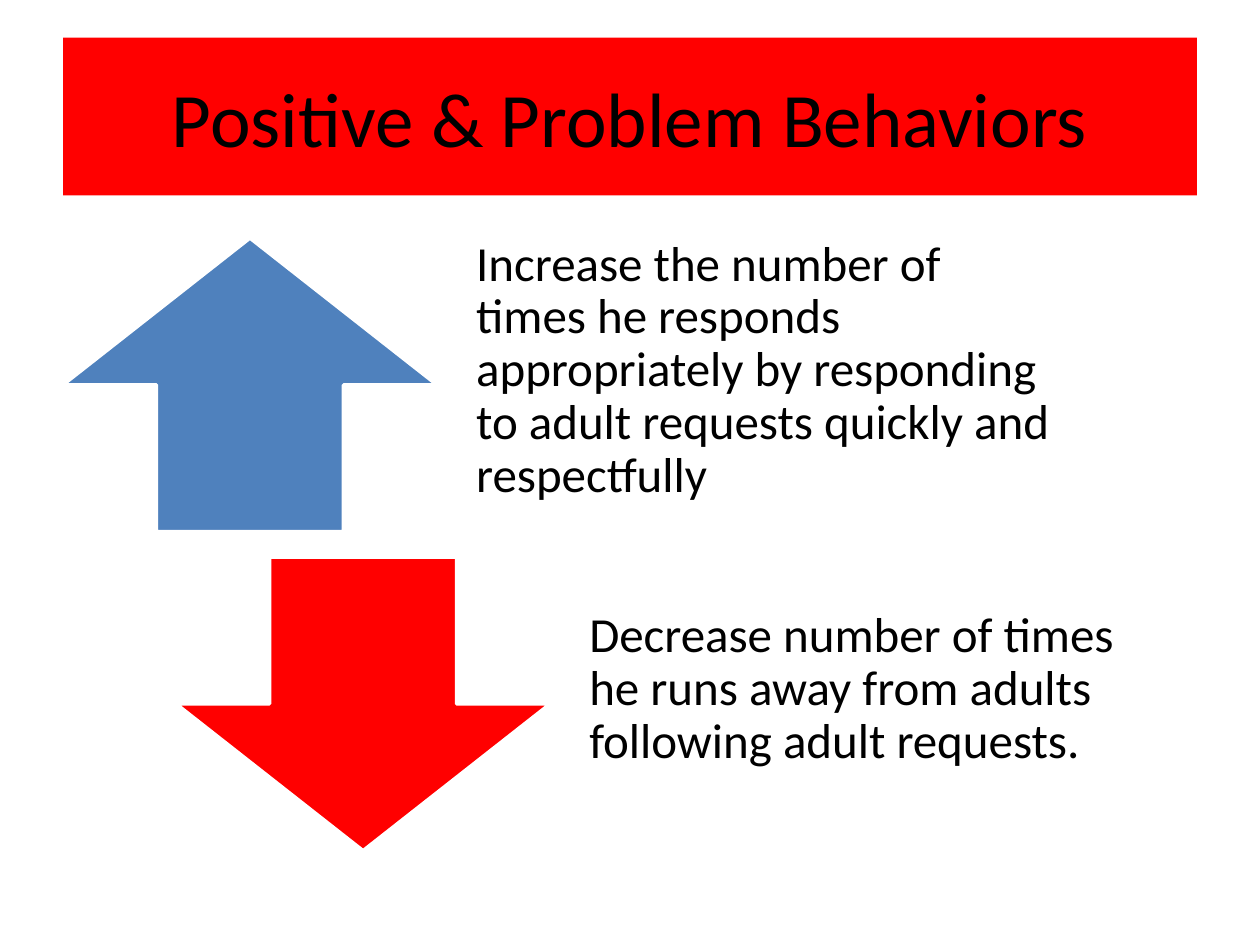
from pptx import Presentation
from pptx import util as u
from pptx.dml.color import RGBColor
from pptx.enum import shapes, text

COLORS = {"red": "FF0000", "blue": "4F81BD", "white": "FFFFFF", "black": "000000"}


class SlideBuilder:
    font = "Calibri"
    title_size = 44
    body_size = 28

    def __init__(self, prs):
        self.s = prs.slides.add_slide(prs.slide_layouts[5])

    def fill(self, sp, color):
        sp.fill.solid()
        sp.fill.fore_color.rgb = RGBColor.from_string(COLORS[color])

    def set_words(self, sp, words, size, align):
        tf = sp.text_frame
        tf.text = words
        tf.word_wrap = True
        tf.auto_size = text.MSO_AUTO_SIZE.NONE
        tf.vertical_anchor = text.MSO_ANCHOR.MIDDLE
        p = tf.paragraphs[0]
        p.alignment = align
        r = p.runs[0]
        r.font.name = self.font
        r.font.size = u.Pt(size)
        r.font.color.rgb = RGBColor.from_string(COLORS["black"])
        return tf

    def title(self, words, left, top, width, height):
        sp = self.s.shapes.title
        sp.left, sp.top, sp.width, sp.height = map(u.Cm, (left, top, width, height))
        self.fill(sp, "red")
        self.set_words(sp, words, self.title_size, text.PP_ALIGN.CENTER)

    def arrow(self, kind, color, left, top, width, height):
        sp = self.s.shapes.add_shape(kind, *map(u.Cm, (left, top, width, height)))
        sp.shadow.inherit = False
        self.fill(sp, color)
        sp.line.color.rgb = RGBColor.from_string(COLORS["white"])
        sp.line.width = u.Pt(2)

    def goal(self, words, left, top, width, height):
        sp = self.s.shapes.add_textbox(*map(u.Cm, (left, top, width, height)))
        tf = self.set_words(sp, words, self.body_size, text.PP_ALIGN.LEFT)
        tf.margin_left = tf.margin_right = tf.margin_bottom = u.Cm(0.56)
        tf.margin_top = 0
        tf.paragraphs[0].line_spacing = 0.9


def main():
    prs = Presentation()
    prs.slide_width, prs.slide_height = u.Cm(25.4), u.Cm(19.05)
    slide = SlideBuilder(prs)

    # Title band
    slide.title("Positive & Problem Behaviors", 1.27, 0.76, 22.86, 3.18)

    # Arrows with their goals, the second row stepped right and down
    arrow_w, text_w, row_h = 7.54, 12.8, 5.92
    left, top = 1.27, 4.8
    step_x, step_y, text_offset = 2.28, 6.43, 7.77
    rows = [
        (shapes.MSO_SHAPE.UP_ARROW, "blue",
         "Increase the number of times he responds appropriately by "
         "responding to adult requests quickly and respectfully"),
        (shapes.MSO_SHAPE.DOWN_ARROW, "red",
         "Decrease number of times he runs away from adults following "
         "adult requests."),
    ]
    for i, (kind, color, words) in enumerate(rows):
        x, y = left + i * step_x, top + i * step_y
        slide.arrow(kind, color, x, y, arrow_w, row_h)
        slide.goal(words, x + text_offset, y, text_w, row_h)

    prs.save("out.pptx")


if __name__ == "__main__":
    main()
